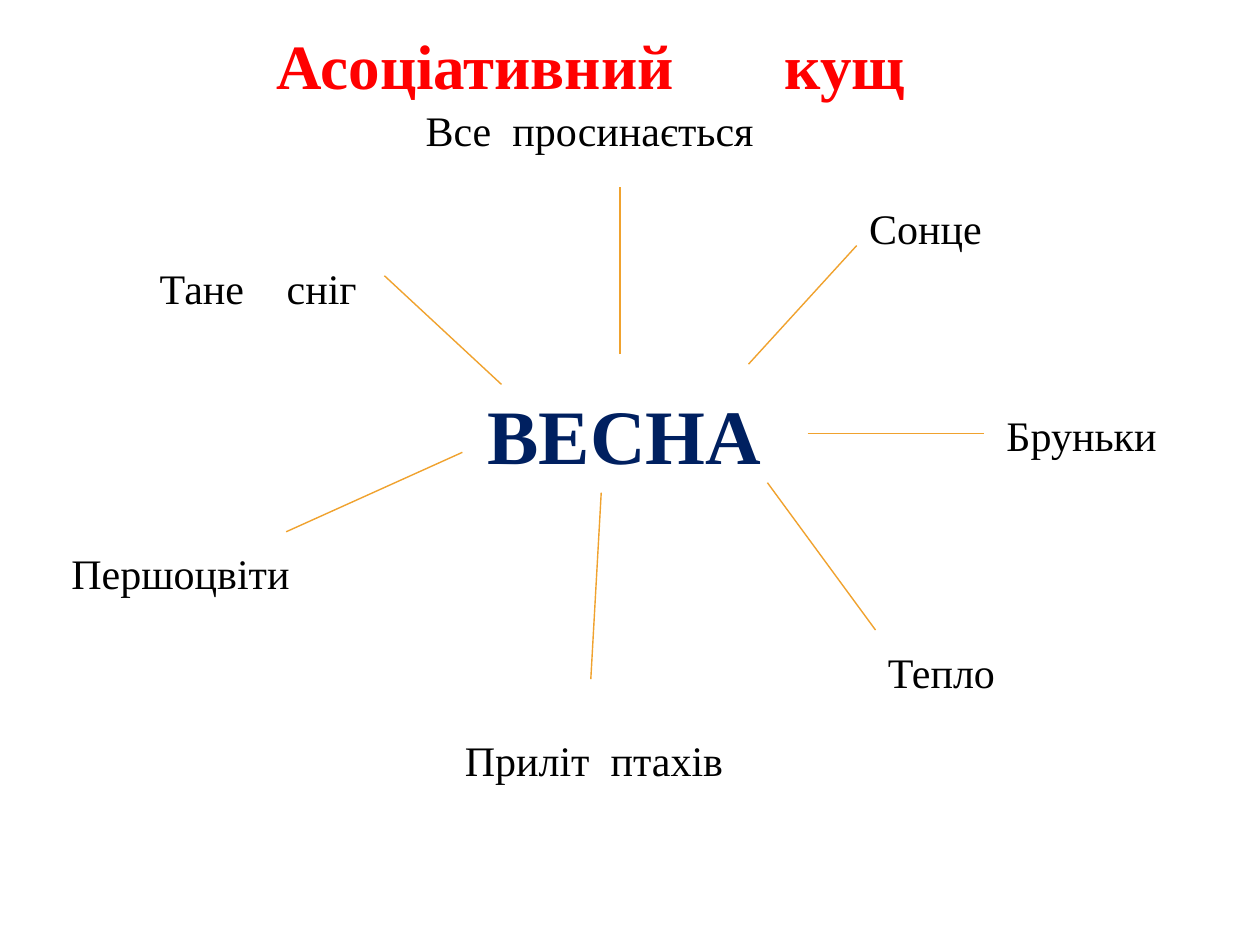
from lxml import etree
from pptx import Presentation
from pptx.dml.color import RGBColor
from pptx.enum.shapes import MSO_CONNECTOR, MSO_SHAPE
from pptx.enum.text import MSO_ANCHOR, MSO_AUTO_SIZE, PP_ALIGN
from pptx.oxml.ns import qn
from pptx.util import Cm, Pt

STRAIGHT = MSO_CONNECTOR.STRAIGHT
ELLIPSE = MSO_SHAPE.OVAL
MIDDLE = MSO_ANCHOR.MIDDLE
GROW = MSO_AUTO_SIZE.SHAPE_TO_FIT_TEXT
LEFT, CENTER = PP_ALIGN.LEFT, PP_ALIGN.CENTER

FONT = "Times New Roman"
COLORS = {"title": "FF0000", "topic": "002060", "label": "000000", "ray": "F0A22E"}

RAYS = [
    ((10.11, 7.75), (7.75, 5.56)),
    ((12.5, 7.14), (12.5, 3.76)),
    ((15.09, 7.34), (17.27, 4.95)),
    ((16.28, 8.74), (19.84, 8.74)),
    ((15.47, 9.73), (17.65, 12.7)),
    ((12.12, 9.93), (11.91, 13.69)),
    ((9.32, 9.12), (5.77, 10.72)),
]

LABELS = [
    ("Тане\tсніг", 2.97, 5.16, 4.78, {"tab": 2.56}),
    ("Все\tпросинається", 8.33, 1.98, 7.34, {"tab": 1.75}),
    ("Сонце", 17.27, 3.96, 5.77, {}),
    ("Бруньки", 20.04, 8.13, 3.78, {}),
    ("Першоцвіти", 1.19, 10.92, 5.18, {}),
    ("Приліт\tптахів", 9.12, 14.68, 5.77, {"tab": 2.94, "wrap": False}),
    ("Тепло", 17.65, 12.9, 4.57, {}),
]


def write_text(shape, text, size=24, color="label", bold=False, align=LEFT, tab=None, wrap=True):
    """Put one formatted paragraph into a shape, with an optional tab stop in cm."""
    frame = shape.text_frame
    frame.word_wrap = wrap
    paragraph = frame.paragraphs[0]
    paragraph.alignment = align
    run = paragraph.add_run()
    run.text = text
    run.font.name = FONT
    run.font.size = Pt(size)
    run.font.bold = bold
    run.font.color.rgb = RGBColor.from_string(COLORS[color])
    if tab is not None:
        properties = paragraph._p.get_or_add_pPr()
        stops = etree.SubElement(properties, qn("a:tabLst"))
        etree.SubElement(stops, qn("a:tab"), pos=str(Cm(tab)), algn="l")


def add_text_box(slide, text, left, top, width, height=1.27, inset=0.25, **text_format):
    """Add a text box that grows with its text."""
    box = slide.shapes.add_textbox(Cm(left), Cm(top), Cm(width), Cm(height))
    box.text_frame.auto_size = GROW
    box.text_frame.margin_left = Cm(inset)
    write_text(box, text, **text_format)


def add_topic(slide, text):
    """Add the central ellipse without fill or outline."""
    ellipse = slide.shapes.add_shape(ELLIPSE, Cm(4.95), Cm(6.35), Cm(15.29), Cm(4.78))
    ellipse.shadow.inherit = False
    ellipse.fill.background()
    ellipse.line.fill.background()
    ellipse.text_frame.vertical_anchor = MIDDLE
    write_text(ellipse, text, size=44, color="topic", bold=True, align=CENTER)


def add_ray(slide, start, end):
    """Add a thin line from the topic towards a label."""
    points = [Cm(value) for value in (*start, *end)]
    ray = slide.shapes.add_connector(STRAIGHT, *points)
    ray.line.color.rgb = RGBColor.from_string(COLORS["ray"])
    ray.line.width = Pt(0.79)
    etree.SubElement(ray._element.spPr, qn("a:effectLst"))


def main():
    """Build the association bush slide and save it."""
    presentation = Presentation()
    presentation.slide_width, presentation.slide_height = Cm(25.4), Cm(19.05)
    slide = presentation.slides.add_slide(presentation.slide_layouts[6])
    add_topic(slide, "ВЕСНА")
    for start, end in RAYS:
        add_ray(slide, start, end)
    for text, left, top, width, text_format in LABELS:
        add_text_box(slide, text, left, top, width, **text_format)
    add_text_box(slide, "Асоціативний\tкущ", 3.18, 0.41, 17.48, height=1.8, inset=2.4,
                 size=36, color="title", bold=True, tab=10.24)
    presentation.save("out.pptx")


if __name__ == "__main__":
    main()
